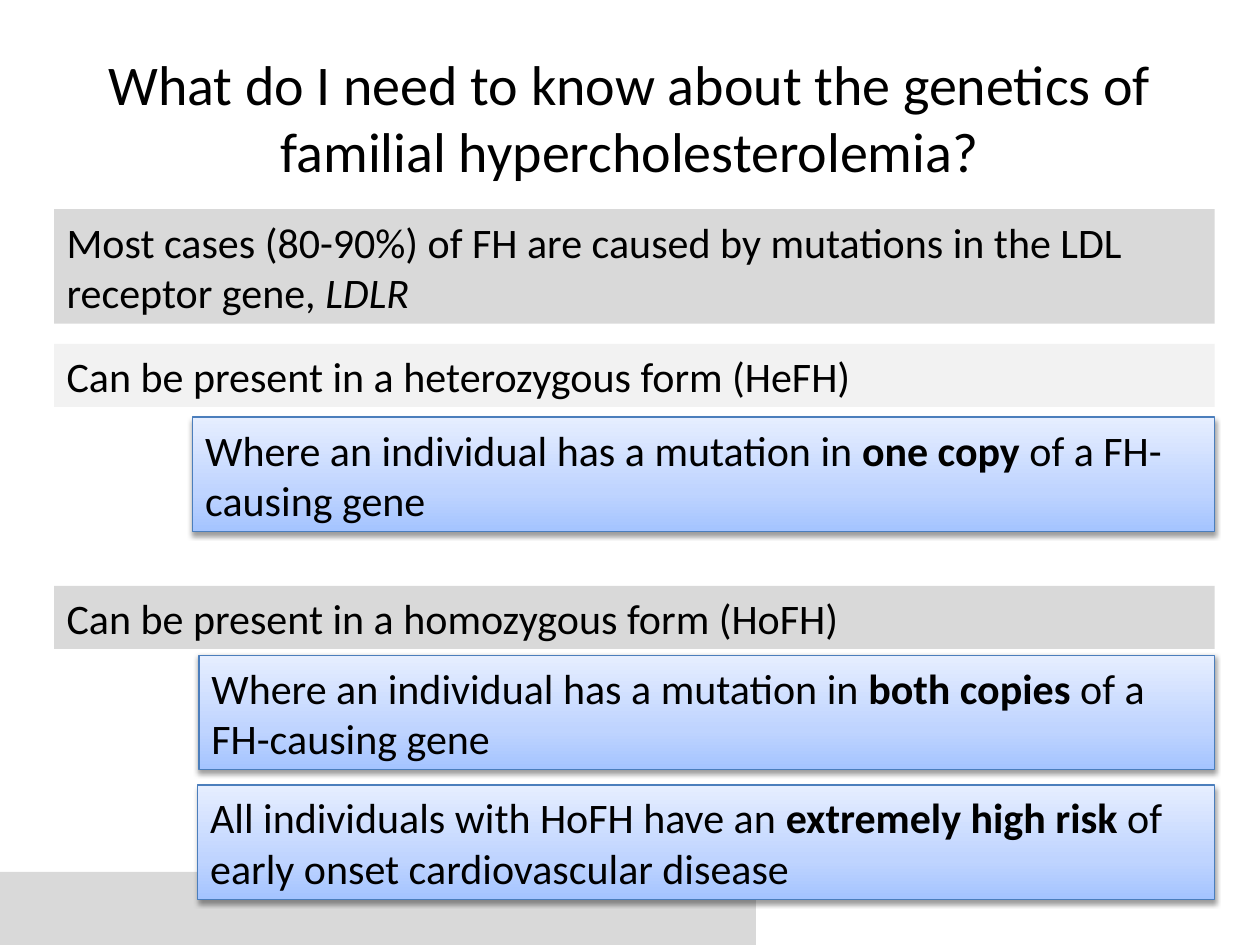
from dataclasses import dataclass

from lxml import etree
from pptx import Presentation
from pptx.dml.color import RGBColor
from pptx.enum.shapes import MSO_SHAPE
from pptx.enum.text import MSO_ANCHOR, MSO_AUTO_SIZE, PP_ALIGN
from pptx.oxml.ns import qn
from pptx.util import Inches, Pt

RECT = MSO_SHAPE.RECTANGLE
MIDDLE = MSO_ANCHOR.MIDDLE
GROW = MSO_AUTO_SIZE.SHAPE_TO_FIT_TEXT
LEFT, CENTER = PP_ALIGN.LEFT, PP_ALIGN.CENTER


@dataclass(frozen=True)
class Theme:
    font: str = "Calibri"
    title: int = 32
    body: int = 24
    ink: str = "000000"
    gray: str = "D9D9D9"
    pale: str = "F2F2F2"
    edge: str = "4B7EBC"
    blues: tuple = ((0, "A4C4FF"), (35, "BFD4FF"), (100, "E6EEFF"))


def put(target, values):
    for name, value in values.items():
        setattr(target, name, value)


def add(parent, tag, **values):
    """Append an XML child with the given attributes."""
    return etree.SubElement(parent, qn(tag), {k: str(v) for k, v in values.items()})


class Page:
    def __init__(self, slide, theme):
        self.slide = slide
        self.theme = theme

    def label(self, shape, runs, size, align):
        """Fill a shape with (text, style) runs."""
        frame = shape.text_frame
        put(frame, {"word_wrap": True, "vertical_anchor": MIDDLE})
        para = frame.paragraphs[0]
        para.alignment = align
        for text, style in runs:
            run = para.add_run()
            run.text = text
            put(run.font, {"name": self.theme.font, "size": Pt(size), **style})
            run.font.color.rgb = RGBColor.from_string(self.theme.ink)

    def title(self, text, box):
        shape = self.slide.shapes.title
        put(shape, dict(zip(("left", "top", "width", "height"), map(Inches, box))))
        self.label(shape, [(text, {})], self.theme.title, CENTER)

    def bar(self, box, color, runs=()):
        """Flat rectangle, with text if runs are given."""
        shape = self.slide.shapes.add_shape(RECT, *map(Inches, box))
        shape.shadow.inherit = False
        shape.fill.solid()
        shape.fill.fore_color.rgb = RGBColor.from_string(color)
        shape.line.fill.background()
        if runs:
            self.label(shape, runs, self.theme.body, LEFT)
            shape.text_frame.auto_size = GROW
        return shape

    def card(self, box, runs):
        """Blue gradient rectangle with an outline and a soft shadow."""
        shape = self.bar(box, self.theme.gray, runs)
        shape.line.color.rgb = RGBColor.from_string(self.theme.edge)
        shape.line.width = Pt(0.75)
        shape.fill.gradient()
        shape.fill.gradient_angle = 90
        props = shape.element.spPr
        stops = props.find(".//" + qn("a:gsLst"))
        for stop in list(stops):
            stops.remove(stop)
        for place, color in self.theme.blues:
            add(add(stops, "a:gs", pos=place * 1000), "a:srgbClr", val=color)
        cast = add(props.find(qn("a:effectLst")), "a:outerShdw", blurRad=Pt(3.1),
                   dist=Pt(1.6), dir=90 * 60000, rotWithShape=0)
        add(add(cast, "a:srgbClr", val=self.theme.ink), "a:alpha", val=38000)


def main():
    deck = Presentation()
    put(deck, {"slide_width": Inches(10), "slide_height": Inches(7.5)})
    theme = Theme()
    page = Page(deck.slides.add_slide(deck.slide_layouts[5]), theme)
    bold, italic = {"bold": True}, {"italic": True}
    left, right = 0.43, 9.64
    one, two = 0.5, 0.91  # heights for one and two lines

    # Footer band and title
    page.bar((0, 6.92, 6, 0.58), theme.gray)
    page.title("What do I need to know about the genetics of "
               "familial hypercholesterolemia?", (0.5, 0.3, 9, 1.25))

    # Main statements
    bars = [
        (1.66, two, theme.gray, [
            ("Most cases (80-90%) of FH are caused by mutations in the LDL "
             "receptor gene,", {}), (" LDLR", italic)]),
        (2.73, one, theme.pale, [("Can be present in a heterozygous form (HeFH)", {})]),
        (4.65, one, theme.gray, [("Can be present in a homozygous form (HoFH)", {})]),
    ]
    for top, high, color, runs in bars:
        page.bar((left, top, right - left, high), color, runs)

    # Explanations, aligned on the right edge
    lead = "Where an individual has a mutation in "
    tail = "of a FH-causing gene"
    cards = [
        (1.53, 3.31, lead, "one copy ", tail),
        (1.58, 5.2, lead, "both copies ", tail),
        (1.57, 6.23, "All individuals with HoFH have an ", "extremely high risk",
         " of early onset cardiovascular disease"),
    ]
    for start, top, before, key, after in cards:
        page.card((start, top, right - start, two),
                  [(before, {}), (key, bold), (after, {})])

    deck.save("out.pptx")


if __name__ == "__main__":
    main()
